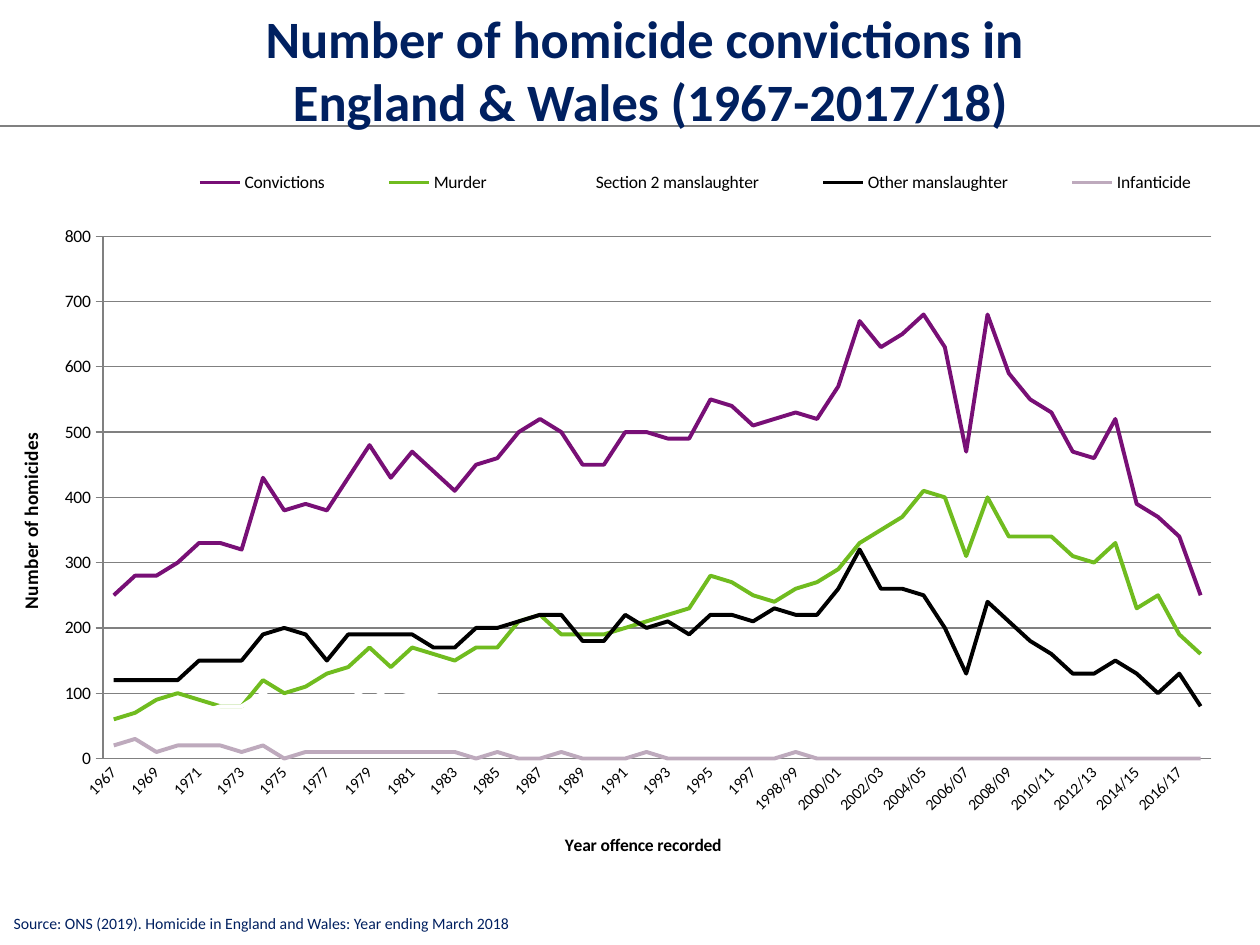
import pptx
import pptx.chart.data
import pptx.dml.color
import pptx.enum.chart
import pptx.enum.shapes
import pptx.enum.text
import pptx.oxml
import pptx.oxml.ns
import pptx.util

NAVY, GREY, BLACK = "002060", "808080", "000000"
YEARS = [str(year) for year in range(1967, 1998)]
YEARS += [f"{year}/{(year + 1) % 100:02}" for year in range(1997, 2018)]
mid = None
MURDER = [
    60, mid, mid, 100, mid, 80, 80, 120, 100, mid, mid, 140, 170, 140, 170, mid, 150, 170,
    170, 210, 220, 190, mid, 190, *[mid] * 3, 230, 280, mid, mid, 240, mid, mid, 290, 330,
    mid, 370, 410, 400, 310, 400, 340, mid, 340, 310, 300, 330, 230, 250, 190, 160]
SECTION_2 = [
    50, *[mid] * 5, 80, 100, 80, mid, mid, 90, 110, 90, mid, 100, 80, *[mid] * 8, 80, 60, 70,
    50, mid, mid, 50, mid, mid, 20, mid, mid, 20, *[mid] * 4, 40, 30, mid, mid, 30, 40, mid,
    20, mid, 10]
OTHER = [
    120, mid, mid, 120, 150, mid, 150, 190, 200, 190, 150, 190, mid, mid, 190, 170, 170, 200,
    *[mid] * 3, 220, 180, 180, 220, 200, 210, 190, 220, mid, 210, 230, mid, 220, 260, 320,
    260, mid, 250, 200, 130, 240, 210, 180, 160, 130, 130, 150, 130, 100, 130, 80]
INFANTICIDE = [
    20, 30, 10, 20, mid, 20, 10, 20, 0, 10, *[mid] * 6, 10, 0, 10, 0, 0, 10, 0, mid, 0, 10,
    0, *[mid] * 4, 0, 10, 0, *[mid] * 17, 0]


def fill_between(points):
    """Fill the gaps on straight lines between known points, to the nearest ten."""
    known = [index for index, value in enumerate(points) if value is not None]
    values = [points[0]]
    for start, end in zip(known, known[1:]):
        step = (points[end] - points[start]) / (end - start)
        values += [round(points[start] + step * count, -1)
                   for count in range(1, end - start + 1)]
    return values


def homicide_series():
    """List name, colour and values of each line, with convictions as the total."""
    kinds = [("Murder", "70BC1F", fill_between(MURDER)),
             ("Section 2 manslaughter", "FFFFFF", fill_between(SECTION_2)),
             ("Other manslaughter", BLACK, fill_between(OTHER)),
             ("Infanticide", "BEAABD", fill_between(INFANTICIDE))]
    total = [sum(year) for year in zip(*(values for _, _, values in kinds))]
    return [("Convictions", "780F76", total)] + kinds


def color(code):
    """Turn a hex string into a colour."""
    return pptx.dml.color.RGBColor.from_string(code)


def element(tag, **attributes):
    """Make an XML element with a namespace prefix."""
    node = pptx.oxml.parse_xml(f"<{tag} {pptx.oxml.ns.nsdecls(tag.split(':')[0])}/>")
    for name, value in attributes.items():
        node.set(name, str(value))
    return node


def layout(x, y, w=None, h=None, target=None):
    """Describe a manual place in shares of the chart."""
    node, manual = element("c:layout"), element("c:manualLayout")
    parts = [("layoutTarget", target), ("xMode", "edge"), ("yMode", "edge"),
             ("x", x), ("y", y), ("w", w), ("h", h)]
    for name, value in parts:
        if value is not None:
            manual.append(element(f"c:{name}", val=value))
    node.append(manual)
    return node


class Sheet:
    """Hold the style and the current page, on a grid of 100 columns by 75 rows."""

    def __init__(self, deck, font="Calibri"):
        """Add a blank page to the deck."""
        self.font = font
        self.cell = deck.slide_width / 100
        self.page = deck.slides.add_slide(deck.slide_layouts[6])

    def grid(self, *cells):
        """Turn grid cells into lengths."""
        return [round(count * self.cell) for count in cells]

    def style(self, font, size, code, bold=False):
        """Set the look of a font."""
        font.name, font.size, font.bold = self.font, pptx.util.Pt(size), bold
        font.color.rgb = color(code)

    def stroke(self, line, code, width=0.75):
        """Set colour and width of a line."""
        line.color.rgb = color(code)
        line.width = pptx.util.Pt(width)

    def rule(self, *ends):
        """Draw a straight line."""
        kind = pptx.enum.shapes.MSO_CONNECTOR.STRAIGHT
        rule = self.page.shapes.add_connector(kind, *self.grid(*ends))
        self.stroke(rule.line, GREY)
        rule._element.spPr.append(element("a:effectLst"))

    def text(self, place, lines, size, bold=False, wrap=True, align="LEFT", anchor="TOP"):
        """Write one paragraph with line breaks."""
        frame = self.page.shapes.add_textbox(*self.grid(*place)).text_frame
        frame.word_wrap = wrap
        frame.vertical_anchor = pptx.enum.text.MSO_ANCHOR[anchor]
        para = frame.paragraphs[0]
        para.alignment = pptx.enum.text.PP_ALIGN[align]
        for index, line in enumerate(lines):
            if index:
                para.add_line_break()
            span = para.add_run()
            span.text = line
            self.style(span.font, size, NAVY, bold)

    def axis(self, axis, title, size, label_size, x, y):
        """Style an axis and place its title."""
        span = axis.axis_title.text_frame.paragraphs[0].add_run()
        span.text = title
        self.style(span.font, size, BLACK, True)
        node = axis.axis_title._element
        for old in node.xpath("c:layout"):
            node.remove(old)
        node.xpath("c:tx")[0].addnext(layout(x, y))
        self.style(axis.tick_labels.font, label_size, BLACK)
        self.stroke(axis.format.line, GREY)

    def line_chart(self, place, categories, series):
        """Draw the line chart with its axes and legend."""
        enum = pptx.enum.chart
        data = pptx.chart.data.CategoryChartData()
        data.categories = categories
        for name, _, values in series:
            data.add_series(name, values)
        chart = self.page.shapes.add_chart(
            enum.XL_CHART_TYPE.LINE, *self.grid(*place), data).chart
        chart.has_title = False
        self.style(chart.font, 10, BLACK)
        chart.plots[0].vary_by_categories = False
        for line, (_, code, _) in zip(chart.plots[0].series, series):
            line.smooth = False
            line.marker.style = enum.XL_MARKER_STYLE.NONE
            self.stroke(line.format.line, code, 2.25)

        years, counts = chart.category_axis, chart.value_axis
        self.axis(years, "Year offence recorded", 10, 9, 0.44, 0.94)
        years.major_tick_mark = enum.XL_TICK_MARK.NONE
        years._element.xpath("c:txPr/a:bodyPr")[0].set("rot", "-2700000")
        years._element.xpath("c:lblOffset")[0].addnext(element("c:tickLblSkip", val=2))
        self.axis(counts, "Number of homicides", 11, 10, 0.01, 0.38)
        counts.minimum_scale, counts.maximum_scale, counts.major_unit = 0, 800, 100
        counts.major_tick_mark = enum.XL_TICK_MARK.OUTSIDE
        self.stroke(counts.major_gridlines.format.line, GREY)

        chart.has_legend = True
        chart.legend.position = enum.XL_LEGEND_POSITION.RIGHT
        chart.legend.include_in_layout = False
        self.style(chart.legend.font, 10, BLACK)
        legend = chart.legend._element
        plot = chart._chartSpace.xpath("c:chart/c:plotArea")[0]
        for node in (legend, plot):
            for old in node.xpath("c:layout"):
                node.remove(old)
        legend.xpath("c:legendPos")[0].addnext(layout(0.11, 0, 0.87, 0.07))
        plot.insert(0, layout(0.08, 0.11, 0.87, 0.73, "inner"))


def main():
    """Build the deck."""
    deck = pptx.Presentation()
    deck.slide_width, deck.slide_height = pptx.util.Inches(10), pptx.util.Inches(7.5)
    sheet = Sheet(deck)
    sheet.rule(0, 10, 100, 10)
    sheet.text((5.7, 2.5, 91.9, 5.9),
               ["Number of homicide convictions in ", "England & Wales (1967-2017/18)"],
               30, bold=True, align="CENTER", anchor="MIDDLE")
    sheet.text((0.1, 72, 79.3, 2.6),
               ["Source: ONS (2019). Homicide in England and Wales: Year ending March 2018"],
               9, wrap=False)
    sheet.line_chart((0.1, 12.5, 101.1, 56.8), YEARS, homicide_series())
    deck.save("out.pptx")


if __name__ == "__main__":
    main()
